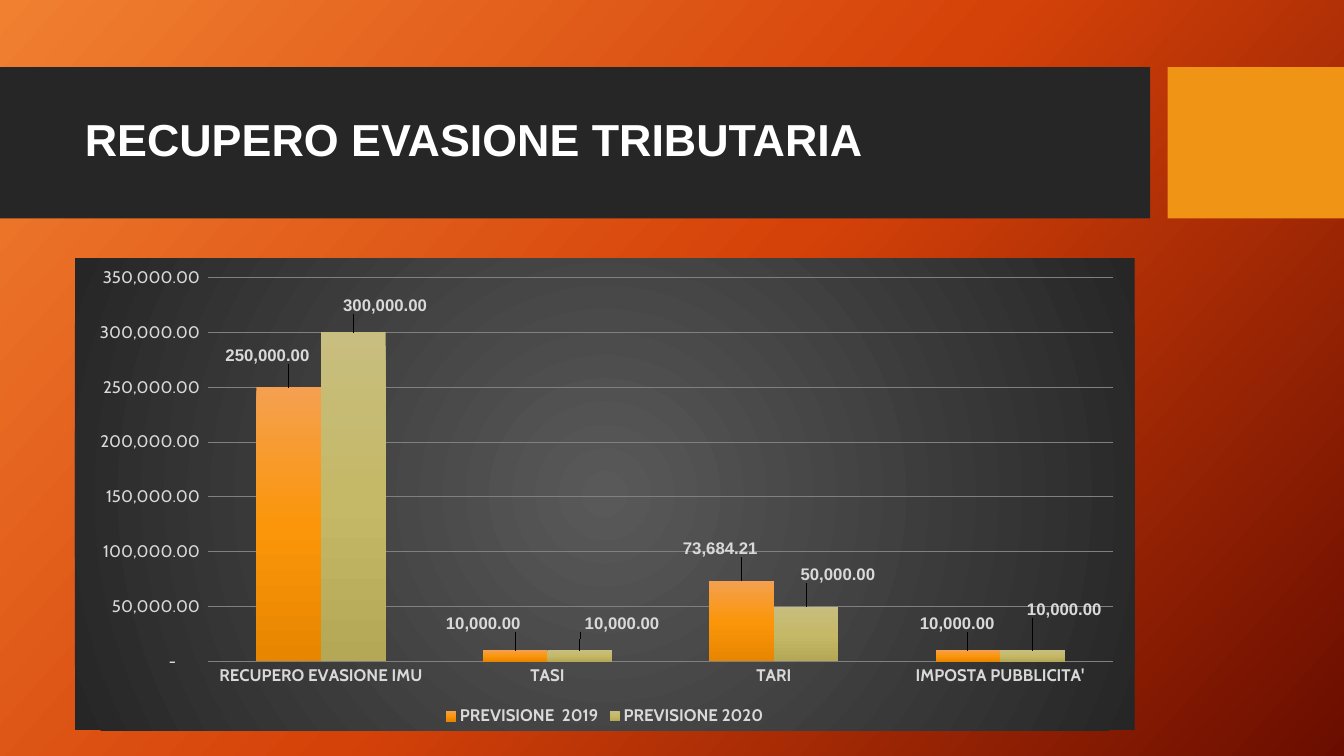
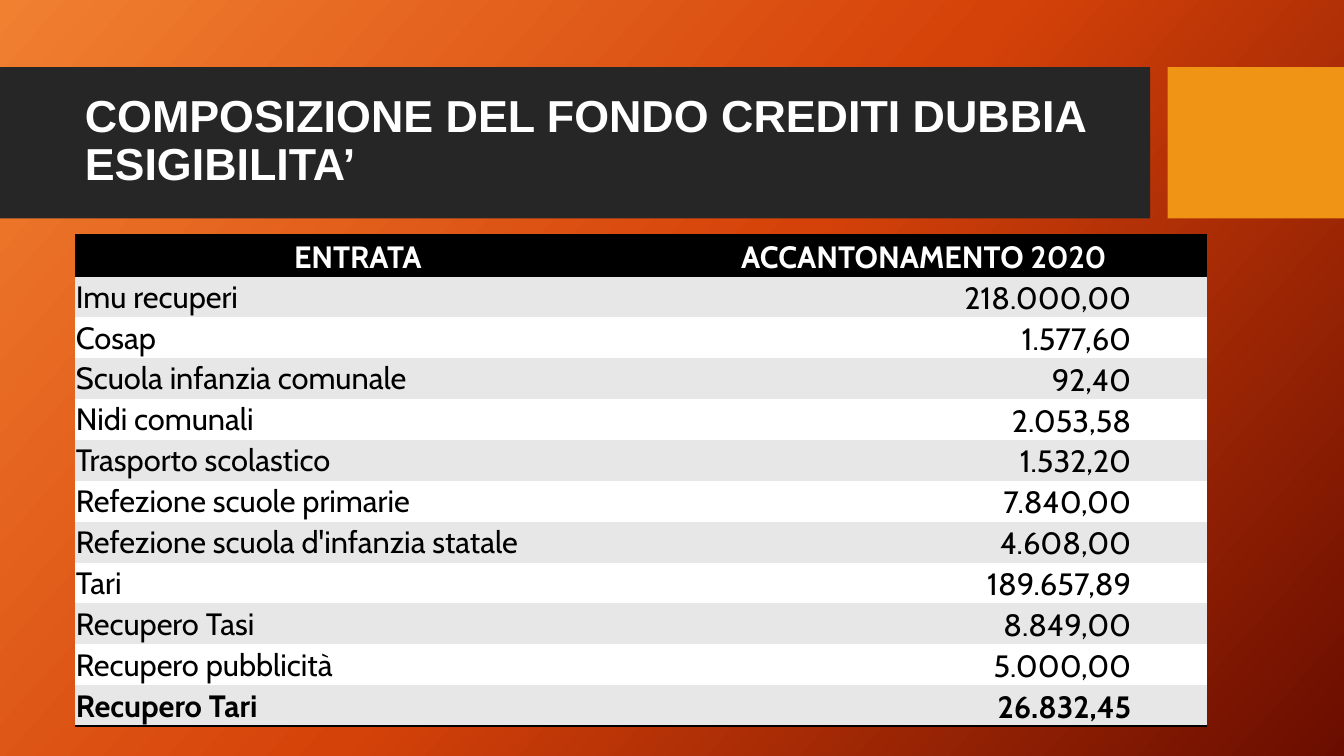
"""Build two budget slides: a tax recovery chart and a doubtful credits table."""
import dataclasses

import pptx
import pptx.chart.data
import pptx.dml.color
import pptx.enum.chart
import pptx.enum.shapes
import pptx.enum.text
import pptx.oxml
import pptx.oxml.ns
import pptx.util

Pt = pptx.util.Pt
qn = pptx.oxml.ns.qn
ALIGN = pptx.enum.text.PP_ALIGN
ANCHOR = pptx.enum.text.MSO_ANCHOR


@dataclasses.dataclass(frozen=True)
class Theme:
    background: tuple = ((0, "F18031"), (50, "D54209"), (100, "6A0D00"))
    panel: tuple = ((0, "595959"), (100, "262626"))
    bars: tuple = (
        ((0, "F4A050"), (50, "FB960A"), (100, "E88600")),
        ((0, "C8BE7F"), (50, "C5B867"), (100, "B4A756")),
    )
    band: str = "262626"
    accent: str = "F09415"
    white: str = "FFFFFF"
    black: str = "000000"
    stripe: str = "E7E7E7"
    chart_text: str = "D9D9D9"
    grid: str = "808080"
    title_font: str = "Arial"
    body_font: str = "Cabin"
    title_size: int = 32
    table_size: int = 22
    chart_size: int = 12


def rgb(color):
    return pptx.dml.color.RGBColor.from_string(color)


def set_font(font, name, size, color, bold=False):
    font.name, font.size, font.bold = name, Pt(size), bold
    font.color.rgb = rgb(color)


def set_gradient(parent, stops, angle=None):
    for old in parent.findall(qn("a:solidFill")):
        parent.remove(old)
    marks = "".join(
        f'<a:gs pos="{pos * 1000}"><a:srgbClr val="{color}"/></a:gs>' for pos, color in stops
    )
    if angle is None:
        shade = ('<a:path path="circle"><a:fillToRect l="50000" t="50000" '
                 'r="50000" b="50000"/></a:path>')
    else:
        shade = f'<a:lin ang="{angle * 60000}" scaled="0"/>'
    parent.insert(0, pptx.oxml.parse_xml(
        f'<a:gradFill {pptx.oxml.ns.nsdecls("a")} rotWithShape="1">'
        f"<a:gsLst>{marks}</a:gsLst>{shade}</a:gradFill>"
    ))


class Deck:
    LEFT = 53.5
    BAND_TOP, BAND_HEIGHT = 48, 108
    NUMBER_FORMAT = r'_(* #,##0.00_);_(* \(#,##0.00\);_(* "-"??_);_(@_)'

    def __init__(self, theme):
        self.theme = theme
        self.prs = pptx.Presentation()
        self.prs.slide_width, self.prs.slide_height = Pt(960), Pt(540)
        self.s = None

    def slide(self, title):
        t = self.theme
        self.s = self.prs.slides.add_slide(self.prs.slide_layouts[6])
        self.s.background.fill.solid()
        set_gradient(self.s.background._cSld.find(".//" + qn("p:bgPr")), t.background, 42)
        self.block(0, 821.5, t.band)
        self.block(834, 126, t.accent)
        self.title(title)

    def block(self, left, width, color):
        sp = self.s.shapes.add_shape(
            pptx.enum.shapes.MSO_SHAPE.RECTANGLE,
            Pt(left), Pt(self.BAND_TOP), Pt(width), Pt(self.BAND_HEIGHT),
        )
        sp.shadow.inherit = False
        sp.fill.solid()
        sp.fill.fore_color.rgb = rgb(color)
        sp.line.fill.background()

    def title(self, text):
        t = self.theme
        tf = self.s.shapes.add_textbox(Pt(self.LEFT), Pt(59), Pt(757), Pt(85)).text_frame
        tf.word_wrap = True
        tf.vertical_anchor = ANCHOR.MIDDLE
        p = tf.paragraphs[0]
        p.text = text
        p.line_spacing = 0.9
        set_font(p.font, t.title_font, t.title_size, t.white, True)

    def chart(self, categories, series, offsets):
        t = self.theme
        data = pptx.chart.data.CategoryChartData(number_format=self.NUMBER_FORMAT)
        data.categories = categories
        for name, values in series:
            data.add_series(name, values)
        chart = self.s.shapes.add_chart(
            pptx.enum.chart.XL_CHART_TYPE.COLUMN_CLUSTERED,
            Pt(self.LEFT), Pt(184.5), Pt(757), Pt(337), data,
        ).chart
        set_font(chart.font, t.body_font, t.chart_size, t.chart_text)
        chart.has_title = False
        chart.has_legend = True
        chart.legend.position = pptx.enum.chart.XL_LEGEND_POSITION.BOTTOM
        chart.legend.include_in_layout = False
        set_font(chart.legend.font, t.body_font, t.chart_size, t.chart_text, True)

        panel = pptx.oxml.parse_xml(
            f'<c:spPr {pptx.oxml.ns.nsdecls("c", "a")}><a:ln><a:noFill/></a:ln></c:spPr>'
        )
        set_gradient(panel, t.panel)
        chart._chartSpace.find(qn("c:chart")).addnext(panel)

        for axis, bold in ((chart.category_axis, True), (chart.value_axis, False)):
            axis.major_tick_mark = pptx.enum.chart.XL_TICK_MARK.NONE
            axis.format.line.fill.background()
            set_font(axis.tick_labels.font, t.body_font, t.chart_size, t.chart_text, bold)
        axis = chart.value_axis
        axis.minimum_scale, axis.maximum_scale, axis.major_unit = 0, 350000, 50000
        axis.tick_labels.number_format = self.NUMBER_FORMAT
        axis.tick_labels.number_format_is_linked = False
        axis.major_gridlines.format.line.color.rgb = rgb(t.grid)
        axis.major_gridlines.format.line.width = Pt(0.75)

        plot = chart.plots[0]
        plot.gap_width, plot.overlap = 150, 0
        plot.vary_by_categories = False
        for ser, stops, shifts in zip(plot.series, t.bars, offsets):
            set_gradient(ser._element.get_or_add_spPr(), stops, 90)
            self.labels(ser, shifts)

    def labels(self, ser, shifts):
        t = self.theme
        outside = pptx.enum.chart.XL_LABEL_POSITION.OUTSIDE_END
        labels = ser.data_labels
        labels.show_value = True
        labels.number_format = self.NUMBER_FORMAT
        labels.number_format_is_linked = False
        labels.position = outside
        set_font(labels.font, t.title_font, t.chart_size, t.chart_text, True)
        for i, (x, y) in enumerate(shifts):
            label = ser.points[i].data_label
            set_font(label.font, t.title_font, t.chart_size, t.chart_text, True)
            label.position = outside
            label._dLbl.find(qn("c:idx")).addnext(pptx.oxml.parse_xml(
                f'<c:layout {pptx.oxml.ns.nsdecls("c")}><c:manualLayout>'
                f'<c:x val="{x}"/><c:y val="{y}"/></c:manualLayout></c:layout>'
            ))

    def table(self, header, rows):
        t = self.theme
        width, height = 404.25, 29.25
        count = len(rows) + 1
        table = self.s.shapes.add_table(
            count, 2, Pt(self.LEFT), Pt(168), Pt(2 * width), Pt(count * height)
        ).table
        table.first_row = table.horz_banding = False
        style = table._tbl.tblPr.find(qn("a:tableStyleId"))
        style.text = "{2D5ABB26-0587-4C30-8999-92F81FD0307C}"
        for column in table.columns:
            column.width = Pt(width)
        last = count - 1
        for i, texts in enumerate([header, *rows]):
            table.rows[i].height = Pt(height)
            head = i == 0
            fill = t.black if head else t.stripe if i % 2 else t.white
            sides = ("lnT", "lnB") if head else ("lnB",) if i == last else ()
            for j, text in enumerate(texts):
                align = ALIGN.CENTER if head else (ALIGN.LEFT, ALIGN.RIGHT)[j]
                cell = table.cell(i, j)
                self.cell(cell, text, align, fill, t.white if head else t.black,
                          head or i == last, sides)
                cell.vertical_anchor = ANCHOR.BOTTOM if head or j else ANCHOR.MIDDLE
                if j and not head:
                    cell.margin_right = Pt(54)

    def cell(self, cell, text, align, fill, color, bold, sides):
        t = self.theme
        cell.margin_left = cell.margin_right = cell.margin_top = Pt(0.75)
        cell.margin_bottom = Pt(0)
        cell.fill.solid()
        cell.fill.fore_color.rgb = rgb(fill)
        p = cell.text_frame.paragraphs[0]
        p.text = text
        p.alignment = align
        set_font(p.font, t.body_font, t.table_size, color, bold)
        for i, side in enumerate(sides):
            cell._tc.get_or_add_tcPr().insert(i, pptx.oxml.parse_xml(
                f'<a:{side} {pptx.oxml.ns.nsdecls("a")} w="{Pt(2)}"><a:solidFill>'
                f'<a:srgbClr val="{t.black}"/></a:solidFill></a:{side}>'
            ))


def main():
    deck = Deck(Theme())

    deck.slide("RECUPERO EVASIONE TRIBUTARIA")
    deck.chart(
        ["RECUPERO EVASIONE IMU", "TASI", "TARI", "IMPOSTA PUBBLICITA'"],
        [
            ("PREVISIONE  2019", (250000, 10000, 73684.21, 10000)),
            ("PREVISIONE 2020", (300000, 10000, 50000, 10000)),
        ],
        [
            ((-0.02, -0.04), (-0.03, -0.03), (-0.02, -0.04), (-0.01, -0.03)),
            ((0.03, -0.03), (0.04, -0.03), (0.03, -0.04), (0.03, -0.06)),
        ],
    )

    deck.slide("COMPOSIZIONE DEL FONDO CREDITI DUBBIA ESIGIBILITA’")
    deck.table(
        ("ENTRATA", "ACCANTONAMENTO 2020"),
        [
            ("Imu recuperi", "218.000,00"),
            ("Cosap", "1.577,60"),
            ("Scuola infanzia comunale", "92,40"),
            ("Nidi comunali", "2.053,58"),
            ("Trasporto scolastico", "1.532,20"),
            ("Refezione scuole primarie", "7.840,00"),
            ("Refezione scuola d'infanzia statale", "4.608,00"),
            ("Tari", "189.657,89"),
            ("Recupero Tasi", "8.849,00"),
            ("Recupero pubblicità", "5.000,00"),
            ("Recupero Tari", "26.832,45"),
        ],
    )

    deck.prs.save("out.pptx")


if __name__ == "__main__":
    main()
